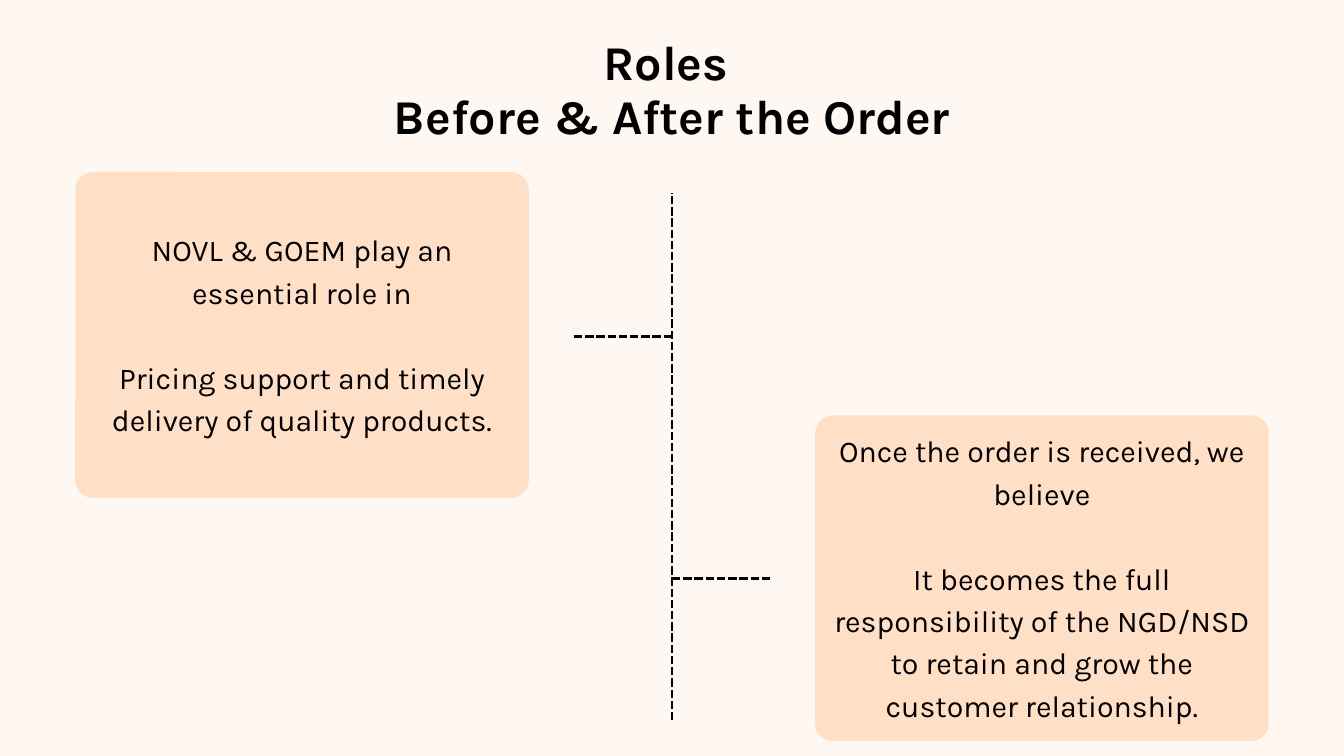
"""Build the slide on roles before and after the order."""
import pptx
import pptx.dml.color
import pptx.enum.dml
import pptx.enum.shapes
import pptx.enum.text
import pptx.oxml.ns
import pptx.util
from lxml import etree

Inches = pptx.util.Inches
Pt = pptx.util.Pt
RGBColor = pptx.dml.color.RGBColor

CREAM = RGBColor(0xFF, 0xF7, 0xF1)
PEACH = RGBColor(0xFF, 0xE0, 0xC6)
BLACK = RGBColor(0, 0, 0)


class Deck:
    """Hold the style and the current slide."""

    font = "Karla"
    ink = BLACK

    def __init__(self, slide):
        self.slide = slide
        fill = slide.background.fill
        fill.solid()
        fill.fore_color.rgb = CREAM

    def text(self, frame, lines, size, pitch, gap=0, bold=False):
        """Fill a text frame with centred paragraphs."""
        frame.word_wrap = True
        for i, line in enumerate(lines):
            para = frame.add_paragraph() if i else frame.paragraphs[0]
            para.text = line
            para.alignment = pptx.enum.text.PP_ALIGN.CENTER
            para.line_spacing = Pt(pitch)
            para.space_before = Pt(gap if i else 0)
            para.font.name = self.font
            para.font.size = Pt(size)
            para.font.bold = bold
            para.font.color.rgb = self.ink

    def title(self, x, y, w, h, lines):
        """Add the bold heading."""
        box = self.slide.shapes.add_textbox(
            Inches(x), Inches(y), Inches(w), Inches(h))
        frame = box.text_frame
        frame.margin_left = frame.margin_right = 0
        frame.margin_top = frame.margin_bottom = 0
        self.text(frame, lines, 52, 57.2, bold=True)

    def card(self, x, y, lines):
        """Add a rounded card with its text."""
        card = self.slide.shapes.add_shape(
            pptx.enum.shapes.MSO_SHAPE.ROUNDED_RECTANGLE,
            Inches(x), Inches(y), Inches(6.75), Inches(4.85))
        card.adjustments[0] = 0.055
        card.shadow.inherit = False
        card.fill.solid()
        card.fill.fore_color.rgb = PEACH
        card.line.fill.background()
        frame = card.text_frame
        frame.margin_left = frame.margin_right = Inches(0.13)
        frame.margin_top = 0
        frame.margin_bottom = Inches(0.1)
        frame.vertical_anchor = pptx.enum.text.MSO_ANCHOR.MIDDLE
        self.text(frame, lines, 32.4, 45.4, gap=45.4)

    def dash(self, x1, y1, x2, y2):
        """Add a dashed straight line."""
        line = self.slide.shapes.add_connector(
            pptx.enum.shapes.MSO_CONNECTOR.STRAIGHT,
            Inches(x1), Inches(y1), Inches(x2), Inches(y2))
        line.line.color.rgb = self.ink
        line.line.width = Pt(3)
        line.line.dash_style = pptx.enum.dml.MSO_LINE.SQUARE_DOT
        etree.SubElement(line._element.spPr, pptx.oxml.ns.qn("a:effectLst"))


def main():
    """Build and save the slide."""
    prs = pptx.Presentation()
    prs.slide_width = Inches(20)
    prs.slide_height = Inches(11.25)
    deck = Deck(prs.slides.add_slide(prs.slide_layouts[6]))

    deck.card(12.13, 6.18, [
        "Once the order is received, we believe",
        "It becomes the full responsibility of the NGD/NSD "
        "to retain and grow the customer relationship."])
    deck.card(1.12, 2.56, [
        "NOVL & GOEM play an essential role in",
        "Pricing support and timely delivery of quality products."])

    mid, arm = 10, 1.46
    deck.dash(mid, 10.72, mid, 2.87)
    deck.title(2.25, 0.55, 15.5, 1.6, ["Roles ", "Before & After the Order"])
    deck.dash(mid, 8.61, mid + arm, 8.61)
    deck.dash(mid - arm, 5.01, mid, 5.01)

    prs.save("out.pptx")


if __name__ == "__main__":
    main()
